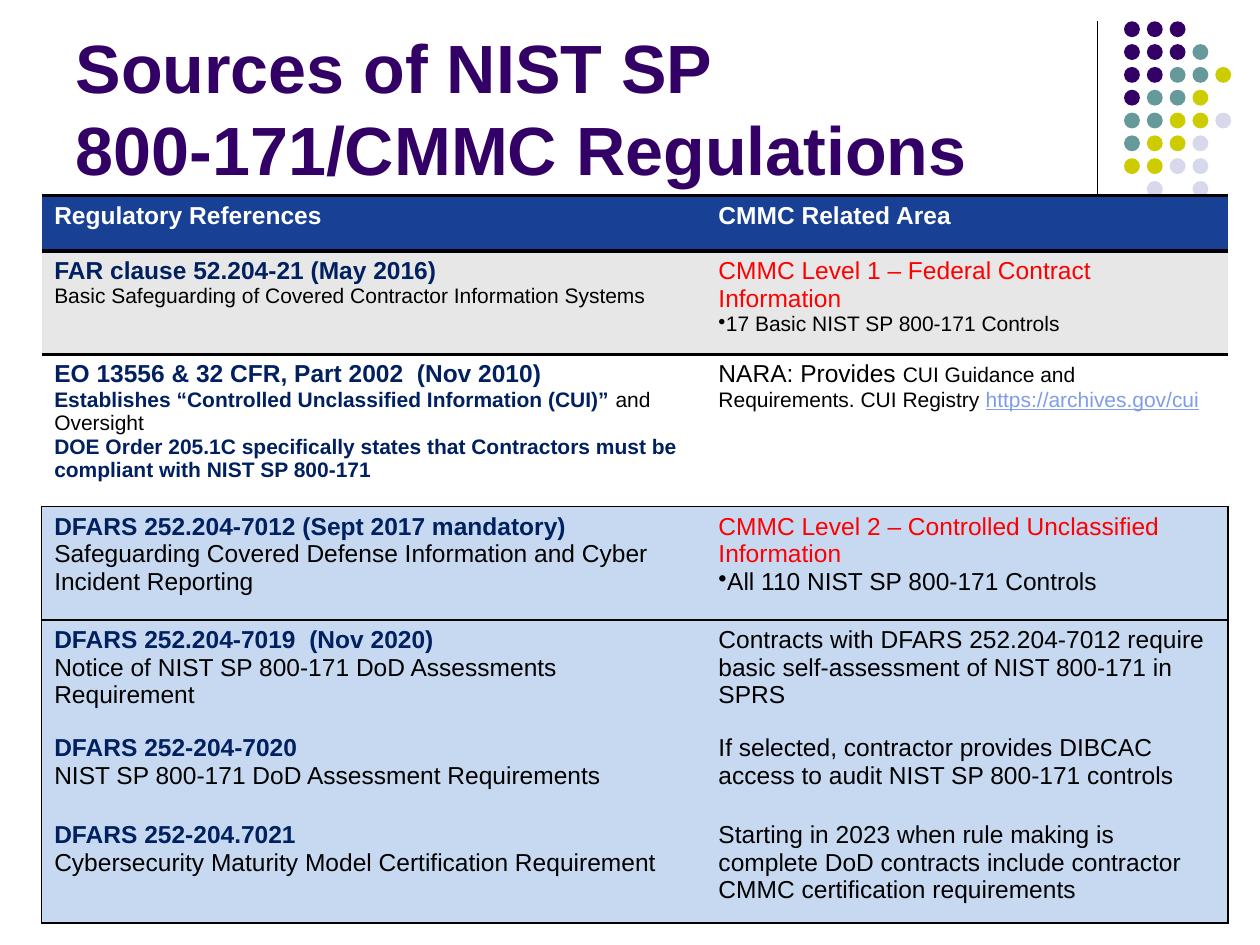
import pptx
import pptx.dml.color
import pptx.enum.shapes
import pptx.enum.text
import pptx.oxml.ns
import pptx.util
from lxml import etree

Cm = pptx.util.Cm
Pt = pptx.util.Pt
qn = pptx.oxml.ns.qn

COLORS = {
    "purple": "330066", "teal": "669999", "olive": "CCCC00", "lilac": "D8D8EC",
    "header": "184195", "gray": "E7E7E7", "white": "FFFFFF", "sky": "C6D9F1",
    "black": "000000", "navy": "002060", "red": "FF0000", "link": "7E9CE8",
}
STYLES = {
    "title": (39, "purple", True), "header": (14, "white", True),
    "clause": (14, "navy", True), "strong": (12, "navy", True),
    "level": (14, "red", False), "body": (14, "black", False),
    "small": (12, "black", False), "link": (12, "link", False),
    "bullet": (14, "black", False), "small bullet": (12, "black", False),
}
DOT_COLORS = {"P": "purple", "T": "teal", "O": "olive", "L": "lilac"}
DOT_ROWS = ["PPP", "PPPT", "PPTTO", "PTTO", "TTOOL", "TOOL", "OOLL", " L L"]
NO_GRID_STYLE = "{2D5ABB26-0587-4C30-8999-92F81FD0307C}"
COLUMN_WIDTHS = [13.39, 10.52]

ROWS = [
    (1.12, "header", {"T": 2, "B": 2}, [
        [[("header", "Regulatory References")]],
        [[("header", "CMMC Related Area")]]]),
    (2.08, "gray", {"T": 2}, [
        [[("clause", "FAR clause 52.204-21 (May 2016)")],
         [("small", "Basic Safeguarding of Covered Contractor Information Systems")]],
        [[("level", "CMMC Level 1 – Federal Contract Information")],
         [("small bullet", "17 Basic NIST SP 800-171 Controls")]]]),
    (3.07, "white", {"B": 1}, [
        [[("clause", "EO 13556 & 32 CFR, Part 2002  (Nov 2010)")],
         [("strong", "Establishes “Controlled Unclassified Information (CUI)” "),
          ("small", "and Oversight")],
         [("strong", "DOE Order 205.1C specifically states that Contractors must be "
                     "compliant with NIST SP 800-171")]],
        [[("body", "NARA: Provides "),
          ("small", "CUI Guidance and Requirements. CUI Registry "),
          ("link", "https://archives.gov/cui")]]]),
    (2.29, "sky", {"T": 1, "L": 1, "R": 1}, [
        [[("clause", "DFARS 252.204-7012 (Sept 2017 mandatory)")],
         [("body", "Safeguarding Covered Defense Information and Cyber Incident Reporting")]],
        [[("level", "CMMC Level 2 – Controlled Unclassified Information")],
         [("bullet", "All 110 NIST SP 800-171 Controls")]]]),
    (2.18, "sky", {"L": 1, "R": 1}, [
        [[("clause", "DFARS 252.204-7019  (Nov 2020)")],
         [("body", "Notice of NIST SP 800-171 DoD Assessments Requirement")]],
        [[("body", "Contracts with DFARS 252.204-7012 require basic self-assessment "
                   "of NIST 800-171 in SPRS")]]]),
    (1.75, "sky", {"L": 1, "R": 1}, [
        [[("clause", "DFARS 252-204-7020")],
         [("body", "NIST SP 800-171 DoD Assessment Requirements")]],
        [[("body", "If selected, contractor provides DIBCAC access to audit "
                   "NIST SP 800-171 controls")]]]),
    (2.18, "sky", {"L": 1, "R": 1, "B": 1}, [
        [[("clause", "DFARS 252-204.7021")],
         [("body", "Cybersecurity Maturity Model Certification Requirement")]],
        [[("body", "Starting in 2023 when rule making is complete DoD contracts include "
                   "contractor CMMC certification requirements")]]]),
]


def rgb(name):
    """Return the named colour."""
    return pptx.dml.color.RGBColor.from_string(COLORS[name])


def set_font(font, style):
    """Apply a named text style to a font."""
    size, color, bold = STYLES[style]
    font.name, font.size, font.bold = "Arial", Pt(size), bold
    font.color.rgb = rgb(color)
    if style == "link":
        font.underline = True


def fill_paragraph(para, spans):
    """Write styled spans into a paragraph, with a bullet where the style asks."""
    for style, text in spans:
        span = para.add_run()
        span.text = text
        set_font(para.font if len(spans) == 1 else span.font, style)
    if spans[0][0].endswith("bullet"):
        properties = para._p.get_or_add_pPr()
        properties.set("marL", "0")
        properties.set("indent", "0")
        properties.insert(0, etree.Element(qn("a:buChar"), char="•"))


def set_borders(cell, borders):
    """Draw black borders of the given widths on the sides of a cell."""
    properties = cell._tc.get_or_add_tcPr()
    sides = [side for side in "LRTB" if side in borders]
    for position, side in enumerate(sides):
        line = etree.Element(qn(f"a:ln{side}"), w=str(int(Pt(borders[side]))))
        fill = etree.SubElement(line, qn("a:solidFill"))
        etree.SubElement(fill, qn("a:srgbClr"), val=COLORS["black"])
        properties.insert(position, line)


def add_title(page, left, top, width, height):
    """Place the slide title in its placeholder."""
    title = page.shapes.title
    title.left, title.top, title.width, title.height = map(Cm, (left, top, width, height))
    frame = title.text_frame
    frame.word_wrap = True
    frame.auto_size = pptx.enum.text.MSO_AUTO_SIZE.NONE
    frame.vertical_anchor = pptx.enum.text.MSO_ANCHOR.BOTTOM
    para = frame.paragraphs[0]
    para.alignment = pptx.enum.text.PP_ALIGN.LEFT
    fill_paragraph(para, [("title", "Sources of NIST SP 800-171/CMMC Regulations")])


def add_ornament(page, left, top, height):
    """Draw the vertical rule and the grid of dots to its right."""
    rule = page.shapes.add_connector(
        pptx.enum.shapes.MSO_CONNECTOR.STRAIGHT,
        Cm(left), Cm(top), Cm(left), Cm(top + height))
    rule.line.color.rgb = rgb("black")
    rule.line.width = Pt(0.75)
    etree.SubElement(rule._element.spPr, qn("a:effectLst"))
    dots = page.shapes.add_group_shape()
    pitch, size, offset = 0.46, 0.32, 0.54
    for row, letters in enumerate(DOT_ROWS):
        for column, letter in enumerate(letters):
            if letter in DOT_COLORS:
                dot = dots.shapes.add_shape(
                    pptx.enum.shapes.MSO_SHAPE.OVAL,
                    Cm(left + offset + column * pitch), Cm(top + row * pitch),
                    Cm(size), Cm(size))
                dot.shadow.inherit = False
                dot.fill.solid()
                dot.fill.fore_color.rgb = rgb(DOT_COLORS[letter])
                dot.line.fill.background()


def add_regulations(page, left, top):
    """Build the table of regulations and their related areas."""
    heights = [row[0] for row in ROWS]
    table = page.shapes.add_table(
        len(ROWS), len(COLUMN_WIDTHS), Cm(left), Cm(top),
        Cm(sum(COLUMN_WIDTHS)), Cm(sum(heights))).table
    table.first_row = table.horz_banding = False
    table._tbl.tblPr.find(qn("a:tableStyleId")).text = NO_GRID_STYLE
    for column, width in zip(table.columns, COLUMN_WIDTHS):
        column.width = Cm(width)
    for index, (height, color, borders, contents) in enumerate(ROWS):
        table.rows[index].height = Cm(height)
        for column, paragraphs in enumerate(contents):
            cell = table.cell(index, column)
            cell.fill.solid()
            cell.fill.fore_color.rgb = rgb(color)
            inner_side = "RL"[column]
            set_borders(cell, {side: width for side, width in borders.items()
                               if side != inner_side})
            frame = cell.text_frame
            for number, spans in enumerate(paragraphs):
                para = frame.add_paragraph() if number else frame.paragraphs[0]
                fill_paragraph(para, spans)


def main():
    """Create the deck and save it."""
    deck = pptx.Presentation()
    deck.slide_width, deck.slide_height = Cm(25.4), Cm(19.05)
    page = deck.slides.add_slide(deck.slide_layouts[5])
    add_title(page, 1.27, 0.33, 20.96, 3.61)
    add_ornament(page, 22.12, 0.43, 4.22)
    add_regulations(page, 0.84, 3.94)
    deck.save("out.pptx")


if __name__ == "__main__":
    main()
